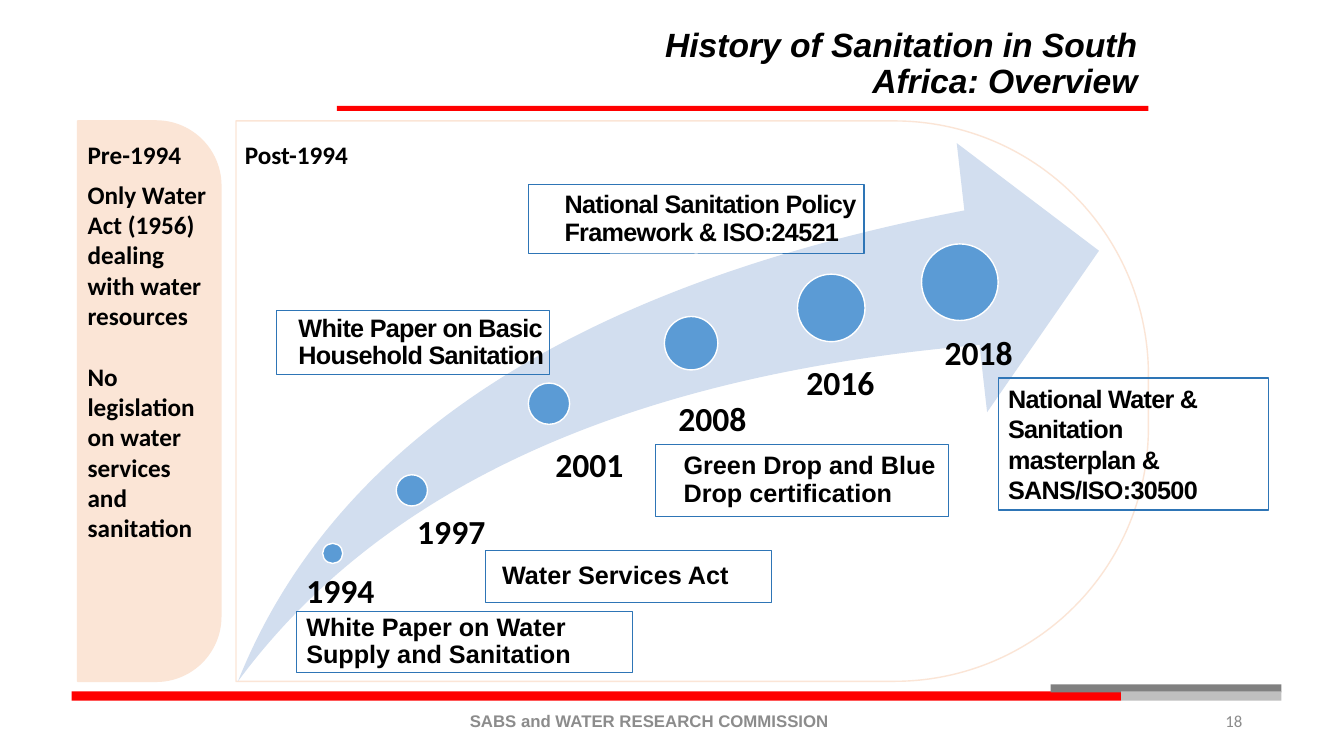
from lxml import etree
from pptx import Presentation
from pptx.dml.color import RGBColor
from pptx.enum.shapes import MSO_SHAPE
from pptx.enum.text import MSO_ANCHOR, PP_ALIGN
from pptx.oxml.ns import qn
from pptx.util import Inches, Pt

RECTANGLE, OVAL = MSO_SHAPE.RECTANGLE, MSO_SHAPE.OVAL
ROUNDED_PANEL, SWOOSH = MSO_SHAPE.ROUND_2_SAME_RECTANGLE, MSO_SHAPE.SWOOSH_ARROW
TOP, MIDDLE, BOTTOM = MSO_ANCHOR.TOP, MSO_ANCHOR.MIDDLE, MSO_ANCHOR.BOTTOM
LEFT, CENTER, RIGHT = PP_ALIGN.LEFT, PP_ALIGN.CENTER, PP_ALIGN.RIGHT

# Content: boxes are (left, top, width, height) in inches
TITLE = "History of Sanitation in South Africa: Overview"
FOOTER = "SABS and WATER RESEARCH COMMISSION"
PAGE_NUMBER = "18"
PRE_HEADING, POST_HEADING = "Pre-1994", "Post-1994"
PRE_NOTES = [  # (text, space before in points)
    ("Only Water Act (1956)", 0),
    ("dealing with water resources", 0),
    ("No legislation on water services and sanitation", 22),
]
RULES = [  # (box, colour name)
    ((3.34, 1.05, 8.05, 0.05), "red"),
    ((0.71, 6.86, 10.41, 0.09), "red"),
    ((10.42, 6.79, 2.29, 0.08), "dark_grey"),
    ((11.12, 6.86, 1.59, 0.09), "light_grey"),
]
POST_PANEL = (2.34, 1.2, 9.05, 5.56)
PRE_PANEL = (0.77, 1.2, 1.42, 5.56)
ARROW = (2.36, 1.42, 8.54, 5.34)
MILESTONES = [  # (year, year position, dot left, top, diameter)
    ("1994", (2.94, 5.6), (3.2, 5.39, 0.2)),
    ("1997", (4.04, 5.02), (3.93, 4.71, 0.31)),
    ("2001", (5.41, 4.35), (5.24, 3.8, 0.41)),
    ("2008", (6.63, 3.9), (6.59, 3.14, 0.53)),
    ("2016", (7.9, 3.54), (7.91, 2.72, 0.67)),
    ("2018", (9.27, 3.24), (9.14, 2.42, 0.76)),
]
CAPTIONS = [  # (text, box, insets, line spacing, letter spacing in points)
    ("White Paper on Water Supply and Sanitation",
     (2.94, 6.07, 3.33, 0.6), (0.1, 0, 0, 0), 0.9, 0),
    ("Water Services Act",
     (4.82, 5.46, 2.83, 0.52), (0.16, 0, 0, 0), 0.9, 0),
    ("White Paper on Basic Household Sanitation",
     (2.74, 3.08, 2.71, 0.64), (0.22, 0, 0, 0), 0.9, -0.5),
    ("Green Drop and Blue Drop certification",
     (6.5, 4.41, 2.91, 0.71), (0.28, 0, 0, 0), 0.9, 0),
    ("National Sanitation Policy Framework & ISO:24521",
     (5.24, 1.83, 3.33, 0.69), (0.36, 0, 0, 0), 0.9, -0.5),
    ("National Water & Sanitation masterplan & SANS/ISO:30500",
     (9.9, 3.75, 2.68, 1.31), (0.1, 0.05, 0.3, 0.05), 1, -0.5),
]

THEME = {
    "red": "FF0000", "dark_grey": "808080", "light_grey": "BFBFBF",
    "peach": "FBE5D6", "pale_blue": "D2DEEF", "blue": "5B9BD5",
    "outline_blue": "2E75B6", "white": "FFFFFF",
    "text": "000000", "muted": "8C8C8C",
    "heading_font": "Arial", "body_font": "Calibri",
    "large": 24, "medium": 18, "small": 12,
}


def color(name):
    return RGBColor.from_string(THEME[name])


def add_shape(slide, kind, box, fill=None, line=None, line_width=1):
    shape = slide.shapes.add_shape(kind, *map(Inches, box))
    shape.shadow.inherit = False
    if fill:
        shape.fill.solid()
        shape.fill.fore_color.rgb = color(fill)
    else:
        shape.fill.background()
    if line:
        shape.line.color.rgb = color(line)
        shape.line.width = Pt(line_width)
    else:
        shape.line.fill.background()
    return shape


def add_panel(slide, box, fill=None):
    """Add a panel rounded on its right side, turned a quarter inside box."""
    left, top, width, height = box
    shift = (width - height) / 2
    turned = (left + shift, top - shift, height, width)
    panel = add_shape(slide, ROUNDED_PANEL, turned, fill, "peach")
    panel.rotation = 90
    panel.adjustments[0], panel.adjustments[1] = 0.453, 0


def write(shape, paragraphs, size="medium", font="body_font", ink="text",
          bold=True, italic=False, align=LEFT, anchor=TOP,
          insets=(0.1, 0.05, 0.1, 0.05), spacing=1, tracking=0):
    frame = shape.text_frame
    frame.word_wrap = True
    frame.vertical_anchor = anchor
    (frame.margin_left, frame.margin_top,
     frame.margin_right, frame.margin_bottom) = map(Inches, insets)
    for index, (text, before) in enumerate(paragraphs):
        paragraph = frame.add_paragraph() if index else frame.paragraphs[0]
        paragraph.alignment = align
        paragraph.line_spacing = spacing
        if before:
            paragraph.space_before = Pt(before)
        run = paragraph.add_run()
        run.text = text
        run.font.size = Pt(THEME[size])
        run.font.name = THEME[font]
        run.font.color.rgb = color(ink)
        run.font.bold, run.font.italic = bold, italic
        if tracking:
            run.font._element.set("spc", str(int(tracking * 100)))


def add_text(slide, text, box, **style):
    write(slide.shapes.add_textbox(*map(Inches, box)), [(text, 0)], **style)


def main():
    presentation = Presentation()
    presentation.slide_width, presentation.slide_height = Inches(13.33), Inches(7.5)
    slide = presentation.slides.add_slide(presentation.slide_layouts[6])

    # Rules, footer and title
    for box, fill in RULES:
        add_shape(slide, RECTANGLE, box, fill)
    add_text(slide, FOOTER, (4.19, 6.95, 4.5, 0.4), size="small",
             font="heading_font", ink="muted", align=CENTER, anchor=MIDDLE)
    add_text(slide, PAGE_NUMBER, (9.42, 6.95, 3, 0.4), size="small",
             ink="muted", bold=False, align=RIGHT, anchor=MIDDLE)
    add_text(slide, TITLE, (5.74, 0.15, 5.64, 0.9), size="large",
             font="heading_font", italic=True, align=RIGHT, anchor=BOTTOM,
             spacing=0.9)

    # Post-1994 panel with the rising arrow
    add_panel(slide, POST_PANEL)
    arrow = add_shape(slide, SWOOSH, ARROW, "pale_blue")
    arrow.adjustments[0], arrow.adjustments[1] = 0.25, 0.25
    add_text(slide, POST_HEADING, (2.33, 1.33, 3.64, 0.4))

    # Pre-1994 panel
    add_panel(slide, PRE_PANEL, "peach")
    add_text(slide, PRE_HEADING, (0.77, 1.33, 1.42, 0.4))
    notes = slide.shapes.add_textbox(*map(Inches, (0.77, 1.73, 1.42, 3.74)))
    write(notes, PRE_NOTES)

    # Milestones along the arrow
    for year, position, (left, top, diameter) in MILESTONES:
        add_shape(slide, OVAL, (left, top, diameter, diameter), "blue", "white")
        add_text(slide, year, (*position, 1.27, 0.5), size="large")
    for text, box, insets, spacing, tracking in CAPTIONS:
        caption = add_shape(slide, RECTANGLE, box, line="outline_blue",
                            line_width=0.75)
        write(caption, [(text, 0)], font="heading_font", anchor=MIDDLE,
              insets=insets, spacing=spacing, tracking=tracking)

    presentation.save("out.pptx")


if __name__ == "__main__":
    main()
